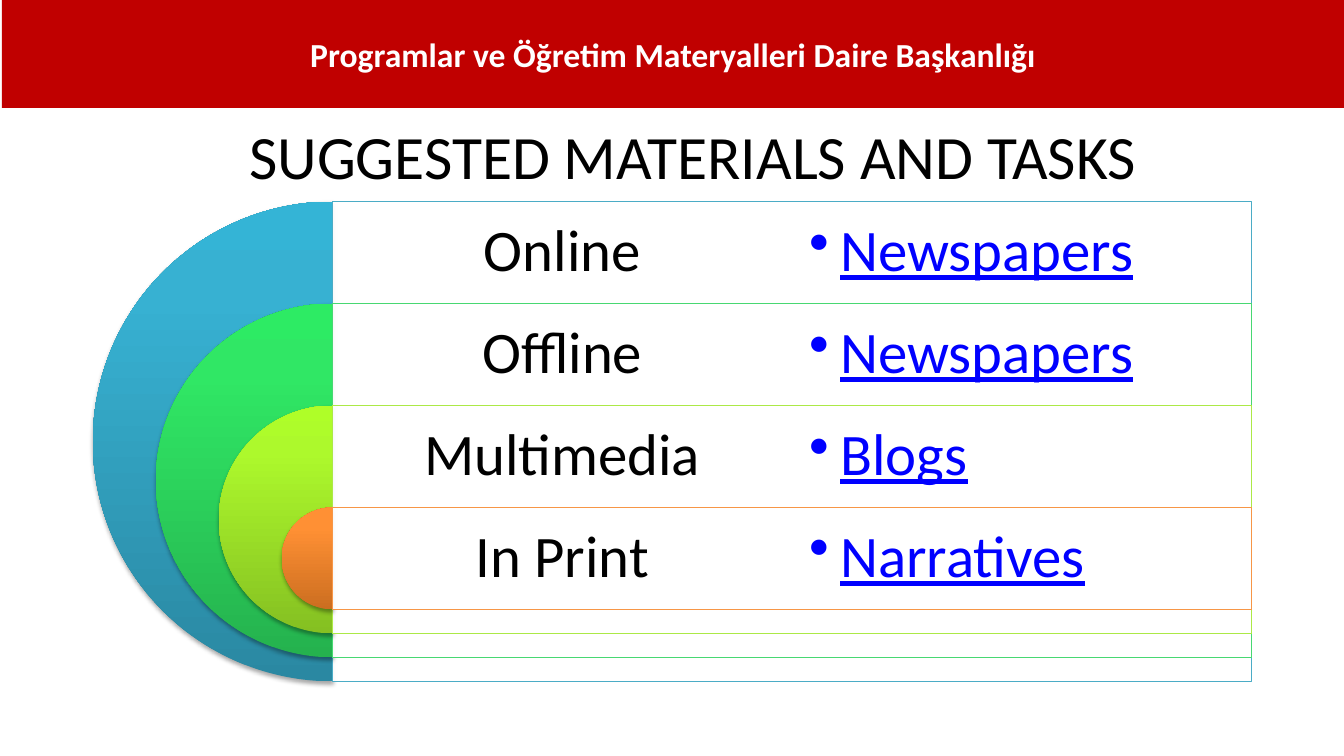
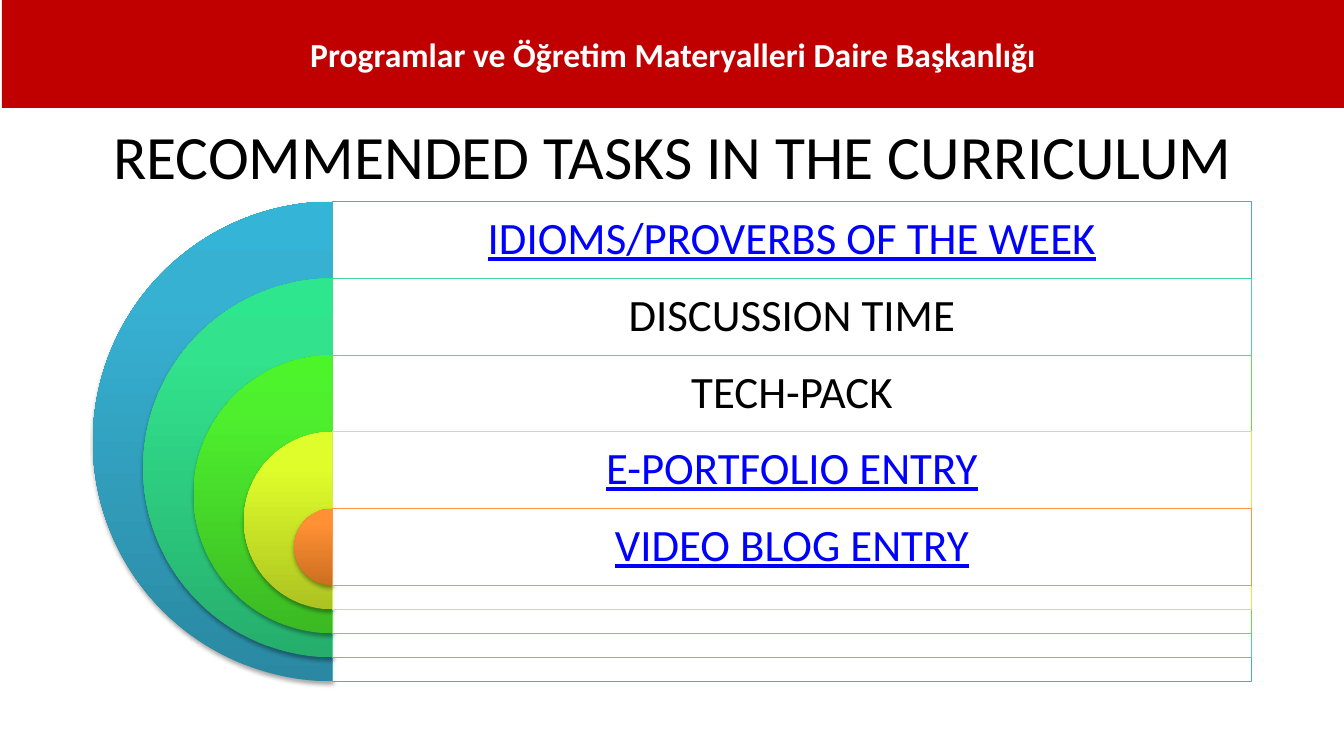
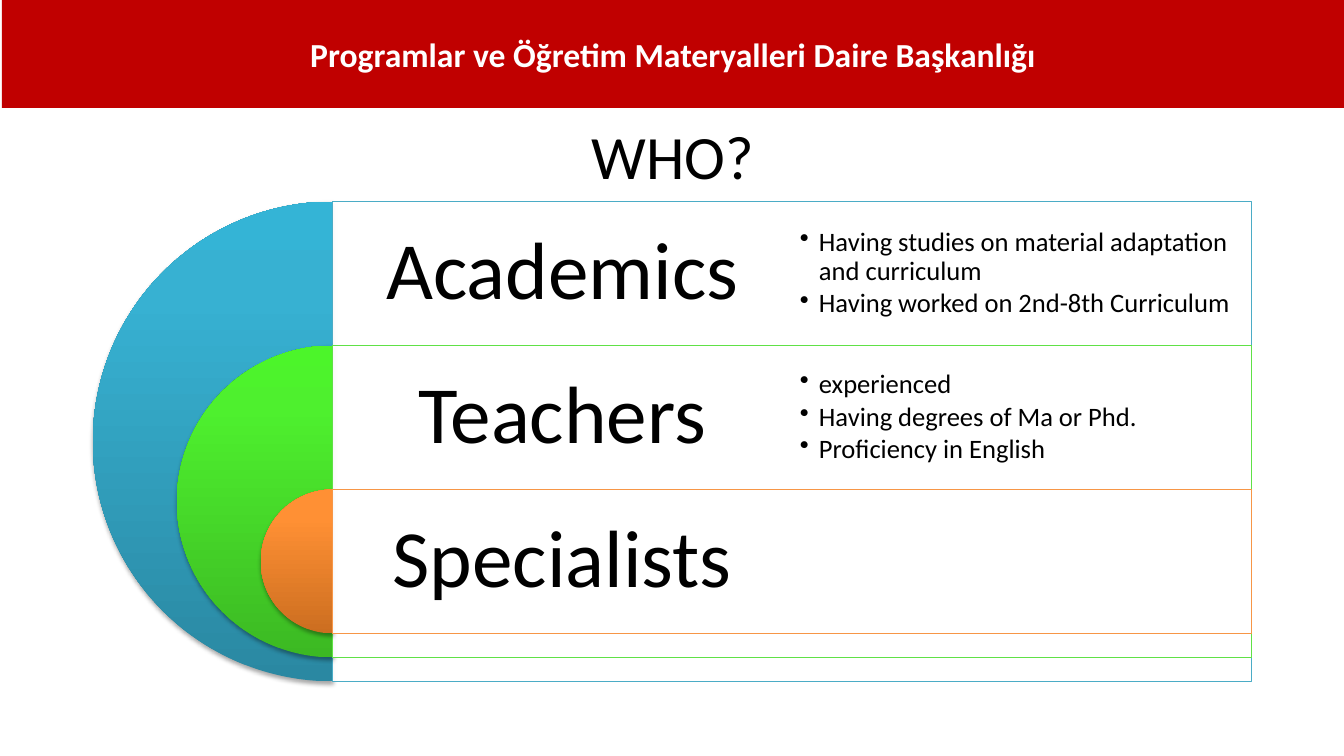
"""Build three slides of stacked half rings with labelled rows."""
import copy

import pptx
import pptx.dml.color
import pptx.enum.shapes
import pptx.enum.text
import pptx.oxml
import pptx.oxml.ns
import pptx.util

Cm = pptx.util.Cm
Pt = pptx.util.Pt
SHAPE = pptx.enum.shapes.MSO_SHAPE
ALIGN = pptx.enum.text.PP_ALIGN
ANCHOR = pptx.enum.text.MSO_ANCHOR
qualified = pptx.oxml.ns.qn

FONT = "Calibri"
BLACK, WHITE, RED, BLUE = "000000", "FFFFFF", "C00000", "0000FF"
DEPARTMENT = "Programlar ve Öğretim Materyalleri Daire Başkanlığı"

STACK_LEFT, STACK_TOP, STACK_SIZE = 2.34, 5.08, 12.09
ROW_LEFT, ROW_WIDTH = 8.38, 23.16
STEP_SHARE = 0.05
STOP_POSITIONS = (0, 0.8, 1)

# Each ring: bottom, middle and top gradient colour, then the row outline.
TEAL = ("2A88A2", "37B1D2", "34B4D6", "4BACC6")
EMERALD = ("25B24E", "30E765", "2DEB64", "47D872")
MINT = ("26AE6D", "32E28D", "2EE68E", "48D491")
GREEN = ("3CB923", "4EF02E", "4CF52A", "60E146")
LIME = ("85C022", "ADF92C", "AFFE28", "ACE946")
YELLOW = ("ACC321", "DFFD2B", "E1FF2B", "D5EC46")
ORANGE = ("CC6E20", "FF9034", "FF9136", "F79646")

PLAIN, LINK = {"color": BLACK}, {"color": BLUE, "underline": True}

SLIDES = [
    {
        "title": "SUGGESTED MATERIALS AND TASKS",
        "title_left": 2.87,
        "heading_size": 42,
        "bullet_size": 42,
        "bullet_indent": 0.79,
        "bullet_style": LINK,
        "rows": [
            (TEAL, "Online", PLAIN, ["Newspapers"]),
            (EMERALD, "Offline", PLAIN, ["Newspapers"]),
            (LIME, "Multimedia", PLAIN, ["Blogs"]),
            (ORANGE, "In Print", PLAIN, ["Narratives"]),
        ],
    },
    {
        "title": "RECOMMENDED TASKS IN THE CURRICULUM",
        "title_left": 2.36,
        "heading_size": 32,
        "rows": [
            (TEAL, "IDIOMS/PROVERBS OF THE WEEK", LINK, []),
            (MINT, "DISCUSSION TIME", PLAIN, []),
            (GREEN, "TECH-PACK", PLAIN, []),
            (YELLOW, "E-PORTFOLIO ENTRY", LINK, []),
            (ORANGE, "VIDEO BLOG ENTRY", LINK, []),
        ],
    },
    {
        "title": "WHO?",
        "title_left": 2.36,
        "heading_size": 58,
        "bullet_size": 19,
        "bullet_indent": 0.48,
        "bullet_style": PLAIN,
        "rows": [
            (TEAL, "Academics", PLAIN, [
                "Having studies on material adaptation and curriculum",
                "Having worked on 2nd-8th Curriculum",
            ]),
            (GREEN, "Teachers", PLAIN, [
                "experienced",
                "Having degrees of Ma or Phd.",
                "Proficiency in English",
            ]),
            (ORANGE, "Specialists", PLAIN, []),
        ],
    },
]


def colour(hex_value):
    """Return an RGB colour for a hex string."""
    return pptx.dml.color.RGBColor.from_string(hex_value)


def set_format(target, values):
    """Set every attribute named in values on target."""
    for name, value in values.items():
        setattr(target, name, value)


def add_run(paragraph, text, size, color, **font_values):
    """Add a formatted run to a paragraph."""
    run = paragraph.add_run()
    run.text = text
    set_format(run.font, {"name": FONT, "size": Pt(size), **font_values})
    run.font.color.rgb = colour(color)


def add_preset(slide, preset, left, top, width, height):
    """Add a preset shape without shadow or outline."""
    shape = slide.shapes.add_shape(preset, Cm(left), Cm(top), Cm(width), Cm(height))
    shape.shadow.inherit = False
    shape.line.fill.background()
    return shape


def add_child(parent, tag, **attributes):
    """Append a drawing element with attributes to its parent."""
    child = pptx.oxml.parse_xml(f"<{tag} {pptx.oxml.ns.nsdecls('a')}/>")
    for name, value in attributes.items():
        child.set(name, str(value))
    parent.append(child)
    return child


def add_half_ring(slide, left, top, size, gradient):
    """Add the left half of a disc with a vertical gradient and soft shadow."""
    half = add_preset(slide, SHAPE.PIE, left, top, size, size)
    half.adjustments[0], half.adjustments[1] = 54, 162
    half.fill.gradient()
    half.fill.gradient_angle = 90
    properties = half._element.spPr
    stop_list = properties.find(".//" + qualified("a:gsLst"))
    stop_list.insert(1, copy.deepcopy(stop_list[0]))
    for stop, position, value in zip(half.fill.gradient_stops, STOP_POSITIONS, gradient):
        stop.color.rgb = colour(value)
        stop.position = position
    shadow = add_child(properties.find(qualified("a:effectLst")), "a:outerShdw",
                       blurRad=Pt(3.1), dist=Pt(1.8), dir=5400000, rotWithShape=0)
    add_child(add_child(shadow, "a:srgbClr", val=BLACK), "a:alpha", val=35000)


def add_row_frame(slide, top, height, outline):
    """Add the translucent white frame to the right of a half ring."""
    frame = add_preset(slide, SHAPE.RECTANGLE, ROW_LEFT, top, ROW_WIDTH, height)
    frame.fill.solid()
    frame.fill.fore_color.rgb = colour(WHITE)
    white = frame._element.spPr.find(qualified("a:solidFill"))[0]
    add_child(white, "a:alpha", val=90000)
    frame.line.color.rgb = colour(outline)
    frame.line.width = Pt(0.75)


def add_text_lines(slide, box, lines, size, style, indent=None):
    """Add a text box of centred lines, or of bullets when indent is given."""
    frame = slide.shapes.add_textbox(*map(Cm, box)).text_frame
    inset = Cm(round(size * 0.0103, 2))
    margins = {f"margin_{side}": inset for side in ("left", "top", "right", "bottom")}
    set_format(frame, {"word_wrap": True, "vertical_anchor": ANCHOR.MIDDLE, **margins})
    for index, line in enumerate(lines):
        paragraph = frame.add_paragraph() if index else frame.paragraphs[0]
        set_format(paragraph, {
            "alignment": ALIGN.LEFT if indent else ALIGN.CENTER,
            "line_spacing": 0.9,
            "space_before": Pt(0.15 * size if index else 0),
        })
        if indent:
            properties = paragraph._p.get_or_add_pPr()
            properties.set("marL", str(Cm(indent)))
            properties.set("indent", str(-Cm(indent)))
            add_child(properties, "a:buChar", char="•")
        add_run(paragraph, line, size, **style)


def add_title(slide, text, left):
    """Place and fill the title placeholder."""
    title = slide.shapes.title
    set_format(title, {"left": Cm(left), "top": Cm(2.06),
                       "width": Cm(29.21), "height": Cm(3.68)})
    set_format(title.text_frame, {"word_wrap": True, "vertical_anchor": ANCHOR.MIDDLE,
                                  "auto_size": pptx.enum.text.MSO_AUTO_SIZE.NONE})
    paragraph = title.text_frame.paragraphs[0]
    paragraph.alignment = ALIGN.CENTER
    add_run(paragraph, text, 44, BLACK)


def add_department_band(slide):
    """Add the red band with the department name."""
    band = add_preset(slide, SHAPE.RECTANGLE, 0.05, 0, 33.82, 2.72)
    band.fill.solid()
    band.fill.fore_color.rgb = colour(RED)
    band.text_frame.vertical_anchor = ANCHOR.MIDDLE
    paragraph = band.text_frame.paragraphs[0]
    paragraph.alignment = ALIGN.CENTER
    add_run(paragraph, DEPARTMENT, 24, WHITE, bold=True)


def add_stack(slide, content):
    """Add nested half rings, each with its frame, heading and bullets."""
    rows = content["rows"]
    step = STACK_SIZE * STEP_SHARE
    row_height = (STACK_SIZE - step * (len(rows) - 1)) / len(rows)
    has_bullets = "bullet_size" in content
    heading_width = ROW_WIDTH / 2 if has_bullets else ROW_WIDTH
    for index, (ring, heading, style, bullets) in enumerate(rows):
        top = STACK_TOP + index * row_height
        size = STACK_SIZE - index * (row_height + step)
        left = STACK_LEFT + (STACK_SIZE - size) / 2
        add_half_ring(slide, left, top, size, ring[:3])
        add_row_frame(slide, top, size, ring[3])
        add_text_lines(slide, (ROW_LEFT, top, heading_width, row_height),
                       [heading], content["heading_size"], style)
        if bullets:
            add_text_lines(slide, (ROW_LEFT + heading_width, top, heading_width, row_height),
                           bullets, content["bullet_size"], content["bullet_style"],
                           content["bullet_indent"])


def main():
    """Build and save the presentation."""
    presentation = pptx.Presentation()
    set_format(presentation, {"slide_width": Cm(33.87), "slide_height": Cm(19.05)})
    title_only = presentation.slide_layouts[5]
    for content in SLIDES:
        slide = presentation.slides.add_slide(title_only)
        add_title(slide, content["title"], content["title_left"])
        add_stack(slide, content)
        add_department_band(slide)
    presentation.save("out.pptx")


if __name__ == "__main__":
    main()
